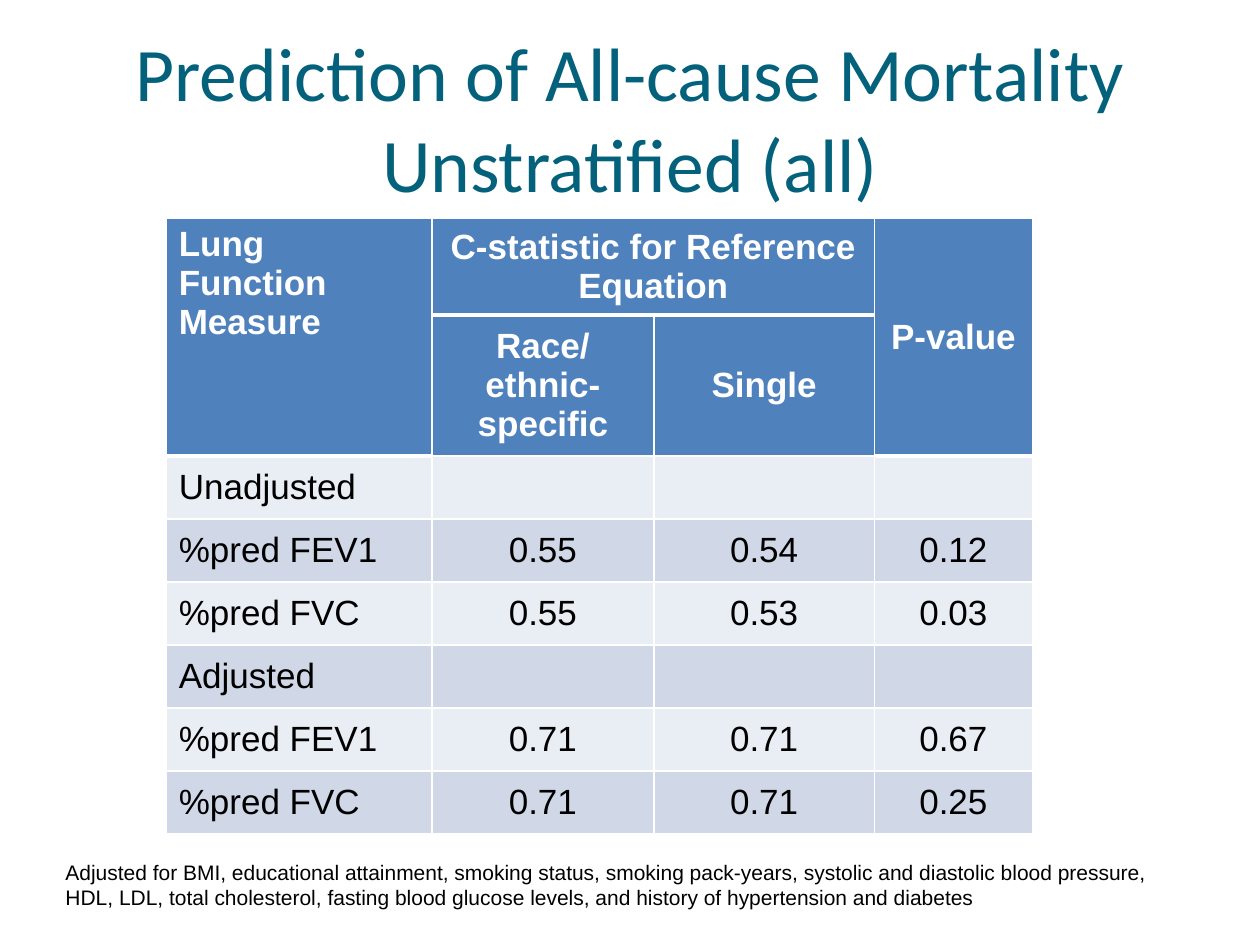
"""Build a slide with a table comparing mortality prediction by reference equation."""
from dataclasses import dataclass
from typing import Any

from lxml.etree import SubElement
from pptx import Presentation
from pptx.dml.color import RGBColor as Color
from pptx.enum.text import MSO_ANCHOR as Anchor, PP_ALIGN as Align
from pptx.oxml.ns import qn
from pptx.util import Cm, Pt


@dataclass(frozen=True)
class Theme:
    title_font: str = "Calibri"
    body_font: str = "Arial"
    title: str = "04617B"
    ink: str = "000000"
    light: str = "FFFFFF"
    header: str = "4F81BD"
    bands: tuple[str, str] = ("E9EDF4", "D0D8E8")
    title_size: float = 43.2
    table_size: float = 20
    note_size: float = 12
    thin: float = 1
    thick: float = 3


@dataclass(frozen=True)
class Area:
    left: float
    top: float
    width: float
    height: float

    def lengths(self) -> tuple[Cm, Cm, Cm, Cm]:
        return Cm(self.left), Cm(self.top), Cm(self.width), Cm(self.height)


@dataclass(frozen=True)
class Style:
    font: str
    size: float
    color: str
    bold: bool = False
    align: Align = Align.LEFT
    anchor: Anchor = Anchor.MIDDLE


@dataclass(frozen=True)
class Merge:
    row: int
    column: int
    last_row: int
    last_column: int


THEME = Theme()
COLUMNS = (5.36, 4.47, 4.45, 3.18)
ROW_HEIGHT = 1.27
SUBHEADER_HEIGHT = 2.84
HEADER_ROWS = 2
MERGES = (Merge(0, 0, 1, 0), Merge(0, 1, 0, 2), Merge(0, 3, 1, 3))
ROWS = (
    ("Lung Function Measure", "C-statistic for Reference Equation", "", "P-value"),
    ("", "Race/ethnic-specific", "Single", ""),
    ("Unadjusted", "", "", ""),
    ("%pred FEV1", "0.55", "0.54", "0.12"),
    ("%pred FVC", "0.55", "0.53", "0.03"),
    ("Adjusted", "", "", ""),
    ("%pred FEV1", "0.71", "0.71", "0.67"),
    ("%pred FVC", "0.71", "0.71", "0.25"),
)
NOTE = (
    "Adjusted for BMI, educational attainment, smoking status, smoking pack-years, "
    "systolic and diastolic blood pressure, HDL, LDL, total cholesterol, fasting "
    "blood glucose levels, and history of hypertension and diabetes"
)


def write(frame: Any, text: str, style: Style) -> None:
    para = frame.paragraphs[0]
    para.alignment = style.align
    span = para.add_run()
    span.text = text
    values = {"name": style.font, "size": Pt(style.size), "bold": style.bold}
    for name, value in values.items():
        setattr(span.font, name, value)
    span.font.color.rgb = Color.from_string(style.color)


def add_text(page: Any, area: Area, text: str, style: Style) -> None:
    frame = page.shapes.add_textbox(*area.lengths()).text_frame
    frame.word_wrap = True
    frame.vertical_anchor = style.anchor
    write(frame, text, style)


def add_border(cell: Any, side: str, width: float) -> None:
    properties = cell._tc.get_or_add_tcPr()
    line = SubElement(properties, qn(f"a:ln{side}"), w=str(Pt(width)))
    fill = SubElement(line, qn("a:solidFill"))
    SubElement(fill, qn("a:srgbClr"), val=THEME.light)


def cell_style(row: int, column: int) -> Style:
    is_header = row < HEADER_ROWS
    return Style(
        THEME.body_font,
        THEME.table_size,
        THEME.light if is_header else THEME.ink,
        bold=is_header,
        align=Align.CENTER if column else Align.LEFT,
        anchor=Anchor.TOP if is_header and not column else Anchor.MIDDLE,
    )


def format_cell(cell: Any, row: int, column: int, text: str) -> None:
    style = cell_style(row, column)
    merged = cell.is_merge_origin or cell.is_spanned
    for side in "LRTB" if row == 0 else "LRB":
        add_border(cell, side, THEME.thick if side == "B" and merged else THEME.thin)
    cell.fill.solid()
    color = THEME.header if row < HEADER_ROWS else THEME.bands[row % 2]
    cell.fill.fore_color.rgb = Color.from_string(color)
    cell.vertical_anchor = style.anchor
    if text:
        write(cell.text_frame, text, style)


def add_results(page: Any, area: Area) -> None:
    table = page.shapes.add_table(len(ROWS), len(COLUMNS), *area.lengths()).table
    for column, width in zip(table.columns, COLUMNS):
        column.width = Cm(width)
    for row in table.rows:
        row.height = Cm(ROW_HEIGHT)
    table.rows[1].height = Cm(SUBHEADER_HEIGHT)
    for merge in MERGES:
        last = table.cell(merge.last_row, merge.last_column)
        table.cell(merge.row, merge.column).merge(last)
    for row, texts in enumerate(ROWS):
        for column, text in enumerate(texts):
            format_cell(table.cell(row, column), row, column, text)


def main() -> None:
    deck = Presentation()
    deck.slide_width, deck.slide_height = Cm(25.4), Cm(19.05)
    page = deck.slides.add_slide(deck.slide_layouts[6])
    title = Style(THEME.title_font, THEME.title_size, THEME.title, align=Align.CENTER)
    note = Style(THEME.body_font, THEME.note_size, THEME.ink, anchor=Anchor.TOP)
    add_text(
        page,
        Area(1.27, 0.76, 22.86, 3.18),
        "Prediction of All-cause Mortality Unstratified (all)",
        title,
    )
    add_results(page, Area(3.35, 4.4, 17.46, 12.47))
    add_text(page, Area(1.07, 17.2, 22.56, 1.27), NOTE, note)
    deck.save("out.pptx")


if __name__ == "__main__":
    main()
